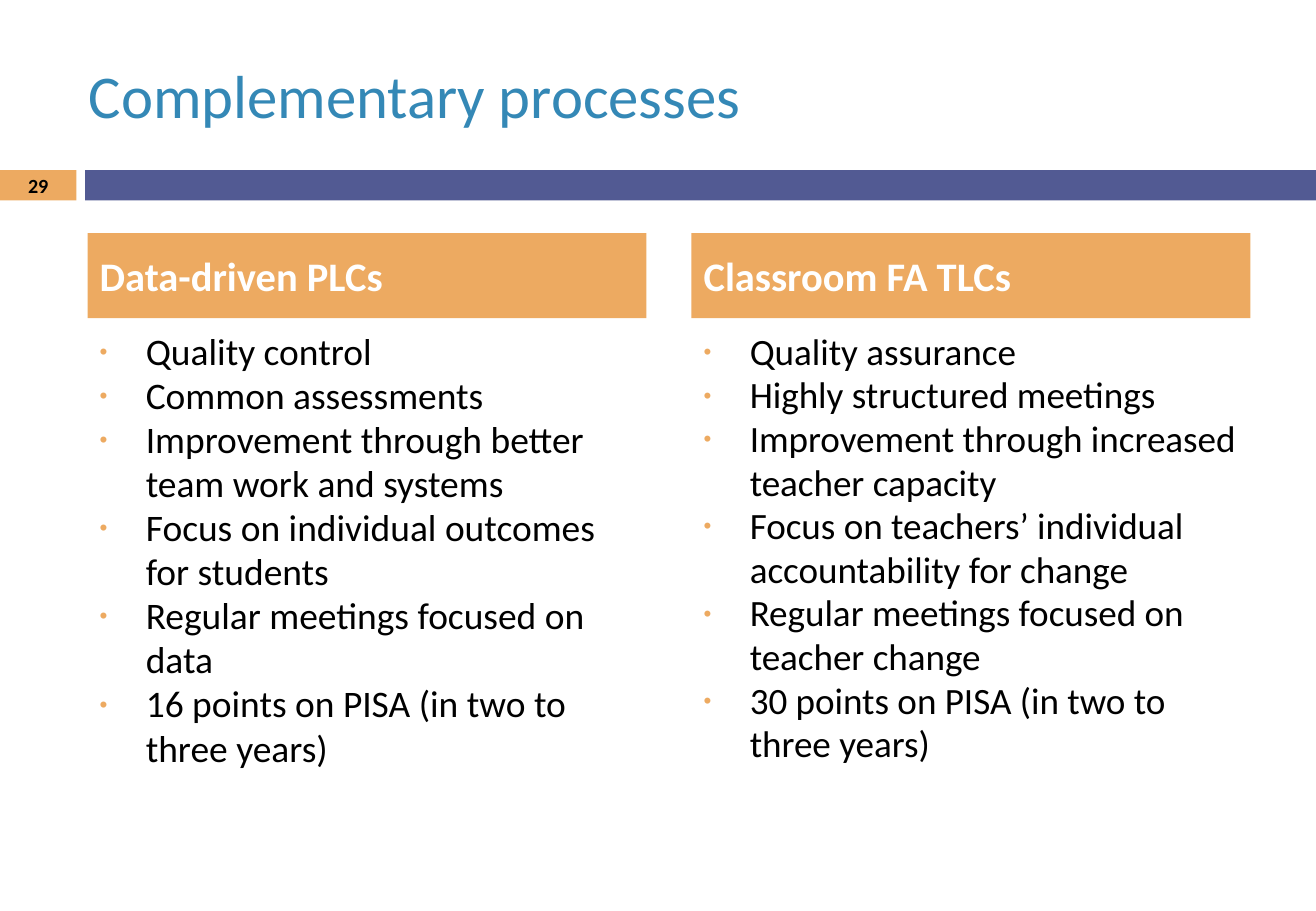
"""Build the slide comparing data-driven PLCs with classroom FA TLCs."""
import pptx
import pptx.dml.color
import pptx.enum.shapes
import pptx.enum.text
import pptx.oxml
import pptx.oxml.ns
import pptx.util
from pptx.util import Inches

ORANGE = pptx.dml.color.RGBColor(0xED, 0xAA, 0x61)
INDIGO = pptx.dml.color.RGBColor(0x52, 0x5A, 0x93)
BLUE = pptx.dml.color.RGBColor(0x34, 0x88, 0xB6)
BLACK = pptx.dml.color.RGBColor(0, 0, 0)
WHITE = pptx.dml.color.RGBColor(0xFF, 0xFF, 0xFF)

FONT = "Calibri"
COLUMN_WIDTH = 4.6
COMPARISON_LAYOUT = 4
COLUMNS = [
    (0.72, 22.2, "Data-driven PLCs", [
        "Quality control",
        "Common assessments",
        "Improvement through better team work and systems",
        "Focus on individual outcomes for students",
        "Regular meetings focused on data",
        "16 points on PISA (in two to three years)",
    ]),
    (5.69, 22, "Classroom FA TLCs", [
        "Quality assurance",
        "Highly structured meetings",
        "Improvement through increased teacher capacity",
        "Focus on teachers’ individual accountability for change",
        "Regular meetings focused on teacher change",
        "30 points on PISA (in two to three years)",
    ]),
]


def place(shape, left, top, width, height):
    shape.left, shape.top = Inches(left), Inches(top)
    shape.width, shape.height = Inches(width), Inches(height)


def add_bar(slide, left, width, color):
    bar = slide.shapes.add_shape(
        pptx.enum.shapes.MSO_SHAPE.RECTANGLE,
        Inches(left), Inches(1.4), Inches(width), Inches(0.25))
    bar.shadow.inherit = False
    bar.fill.solid()
    bar.fill.fore_color.rgb = color
    bar.line.fill.background()


def add_run(paragraph, text, size, color, bold=False):
    run = paragraph.add_run()
    run.text = text
    run.font.name = FONT
    run.font.size = pptx.util.Pt(size)
    run.font.bold = bold
    run.font.color.rgb = color


def write_line(shape, text, size, color, bold=False,
               alignment=pptx.enum.text.PP_ALIGN.LEFT):
    frame = shape.text_frame
    frame.word_wrap = True
    frame.auto_size = pptx.enum.text.MSO_AUTO_SIZE.NONE
    frame.vertical_anchor = pptx.enum.text.MSO_ANCHOR.MIDDLE
    paragraph = frame.paragraphs[0]
    paragraph.alignment = alignment
    paragraph.space_before = pptx.util.Pt(0)
    add_run(paragraph, text, size, color, bold)


def set_bullet(paragraph):
    properties = paragraph._p.get_or_add_pPr()
    properties.set("marL", str(Inches(0.38)))
    properties.set("indent", str(-Inches(0.38)))
    namespace = pptx.oxml.ns.nsdecls("a")
    for markup in (
        f'<a:buClr {namespace}><a:srgbClr val="{ORANGE}"/></a:buClr>',
        f'<a:buSzPct {namespace} val="60000"/>',
        f'<a:buFont {namespace} typeface="Arial"/>',
        f'<a:buChar {namespace} char="•"/>',
    ):
        properties.append(pptx.oxml.parse_xml(markup))


def write_list(shape, items, size):
    frame = shape.text_frame
    frame.auto_size = pptx.enum.text.MSO_AUTO_SIZE.NONE
    frame.vertical_anchor = pptx.enum.text.MSO_ANCHOR.TOP
    for index, item in enumerate(items):
        paragraph = frame.add_paragraph() if index else frame.paragraphs[0]
        paragraph.line_spacing = 0.98
        paragraph.space_before = pptx.util.Pt(0)
        set_bullet(paragraph)
        add_run(paragraph, item, size, BLACK)


def fill_column(heading, body, left, size, title, items):
    place(heading, left, 1.92, COLUMN_WIDTH, 0.7)
    heading.fill.solid()
    heading.fill.fore_color.rgb = ORANGE
    write_line(heading, title, 24, WHITE, bold=True)
    place(body, left, 2.67, COLUMN_WIDTH, 3.92)
    write_list(body, items, size)


def add_page_number(slide, number):
    box = slide.shapes.add_textbox(
        Inches(0), Inches(1.39), Inches(0.63), Inches(0.27))
    write_line(box, number, 11.9, BLACK, bold=True,
               alignment=pptx.enum.text.PP_ALIGN.CENTER)


def main():
    presentation = pptx.Presentation()
    presentation.slide_width = Inches(10.83)
    presentation.slide_height = Inches(7.5)
    slide = presentation.slides.add_slide(
        presentation.slide_layouts[COMPARISON_LAYOUT])

    add_bar(slide, 0, 0.63, ORANGE)
    add_bar(slide, 0.7, 10.13, INDIGO)
    title = slide.shapes.title
    place(title, 0.63, 0.3, 9.66, 0.95)
    write_line(title, "Complementary processes", 36, BLUE)

    placeholders = slide.placeholders
    for index, column in enumerate(COLUMNS):
        fill_column(placeholders[2 * index + 1],
                    placeholders[2 * index + 2], *column)
    add_page_number(slide, "29")
    presentation.save("out.pptx")


if __name__ == "__main__":
    main()
